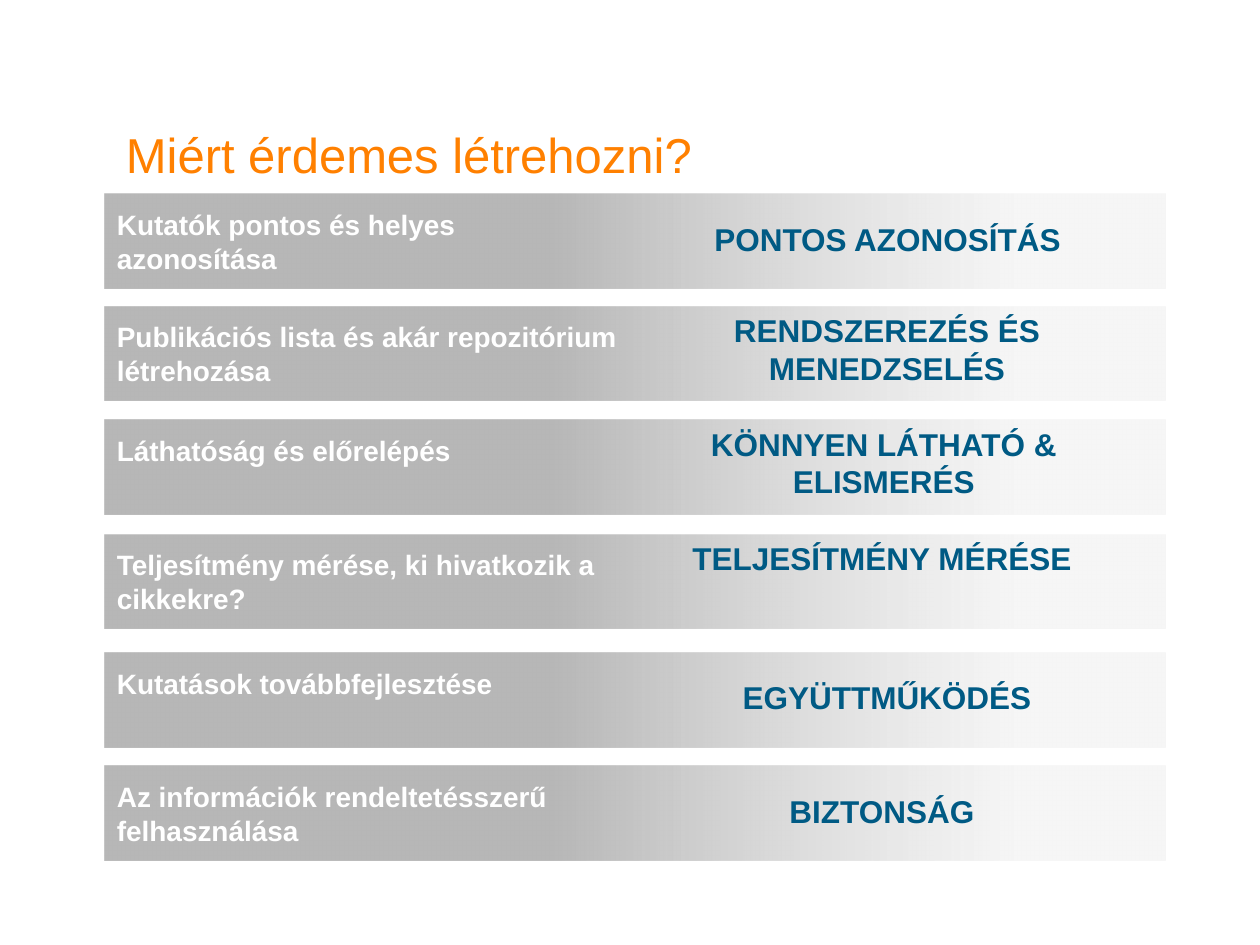
from dataclasses import dataclass

import pptx
import pptx.dml.color
import pptx.enum.text
import pptx.oxml.ns
import pptx.util
from lxml import etree
from pptx.enum.shapes import MSO_SHAPE
from pptx.util import Inches

ALIGN = pptx.enum.text.PP_ALIGN
ANCHOR = pptx.enum.text.MSO_ANCHOR


@dataclass(frozen=True)
class Theme:
    font: str = "Arial"
    title_color: str = "FF8000"
    label_color: str = "FFFFFF"
    benefit_color: str = "005A84"
    bar_start: str = "B7B7B7"
    bar_end: str = "F2F2F2"
    bar_end_alpha: int = 68
    title_size: int = 28
    label_size: int = 16
    benefit_size: int = 18


def rgb(value):
    return pptx.dml.color.RGBColor.from_string(value)


class SlideBuilder:
    def __init__(self, slide, theme):
        self.s = slide
        self.theme = theme

    def text(self, content, box, size, color, bold=True, align=ALIGN.LEFT):
        tb = self.s.shapes.add_textbox(*map(Inches, box))
        tf = tb.text_frame
        tf.word_wrap = True
        p = tf.paragraphs[0]
        p.text = content
        p.alignment = align
        p.font.name = self.theme.font
        p.font.size = pptx.util.Pt(size)
        p.font.bold = bold
        p.font.color.rgb = rgb(color)
        return tf

    def title(self, content, box):
        t = self.theme
        tf = self.text(content, box, t.title_size, t.title_color, bold=False)
        tf.vertical_anchor = ANCHOR.BOTTOM
        tf.margin_left = tf.margin_right = tf.margin_top = tf.margin_bottom = 0
        tf.paragraphs[0].line_spacing = 0.9

    def bar(self, box):
        t = self.theme
        sp = self.s.shapes.add_shape(MSO_SHAPE.RECTANGLE, *map(Inches, box))
        sp.shadow.inherit = False
        sp.line.fill.background()
        sp.fill.gradient()
        sp.fill.gradient_angle = 0
        start, end = sp.fill.gradient_stops
        start.position, start.color.rgb = 0.42, rgb(t.bar_start)
        end.position, end.color.rgb = 0.86, rgb(t.bar_end)
        # Let the light end of the gradient fade into the background
        qn = pptx.oxml.ns.qn
        last = sp.fill._xPr.findall(".//" + qn("a:srgbClr"))[-1]
        etree.SubElement(last, qn("a:alpha"), val=str(t.bar_end_alpha * 1000))

    def label(self, content, box):
        self.text(content, box, self.theme.label_size, self.theme.label_color)

    def benefit(self, content, box):
        t = self.theme
        self.text(content, box, t.benefit_size, t.benefit_color, align=ALIGN.CENTER)


BAR_LEFT, BAR_WIDTH, BAR_HEIGHT = 0.83, 8.42, 0.75
LABEL_OFFSET = 0.06

# Bar top; label, width, height; benefit, box
ROWS = [
    (1.54, "Kutatók pontos és helyes azonosítása", 4.17, 0.64,
     "PONTOS AZONOSÍTÁS", (4.96, 1.7, 4.17, 0.4)),
    (2.43, "Publikációs lista és akár repozitórium létrehozása", 4.83, 0.64,
     "RENDSZEREZÉS ÉS MENEDZSELÉS", (4.83, 2.42, 4.42, 0.71)),
    (3.33, "Láthatóság és előrelépés", 4.5, 0.37,
     "KÖNNYEN LÁTHATÓ & ELISMERÉS", (5.08, 3.32, 3.87, 0.71)),
    (4.24, "Teljesítmény mérése, ki hivatkozik a cikkekre?", 4.17, 0.64,
     "TELJESÍTMÉNY MÉRÉSE", (5.25, 4.23, 3.5, 0.4)),
    (5.18, "Kutatások továbbfejlesztése", 4.69, 0.37,
     "EGYÜTTMŰKÖDÉS", (5, 5.33, 4.08, 0.4)),
    (6.08, "Az információk rendeltetésszerű felhasználása", 4.67, 0.64,
     "BIZTONSÁG", (5, 6.24, 4, 0.4)),
]


def main():
    prs = pptx.Presentation()
    prs.slide_width, prs.slide_height = Inches(10), Inches(7.5)
    b = SlideBuilder(prs.slides.add_slide(prs.slide_layouts[6]), Theme())

    # Heading
    b.title("Miért érdemes létrehozni?", (1, 0.55, 8.06, 0.91))

    # One gradient bar per reason, with its benefit on the right
    for top, label, width, height, benefit, benefit_box in ROWS:
        b.bar((BAR_LEFT, top, BAR_WIDTH, BAR_HEIGHT))
        b.label(label, (BAR_LEFT, top + LABEL_OFFSET, width, height))
        b.benefit(benefit, benefit_box)

    prs.save("out.pptx")


if __name__ == "__main__":
    main()
